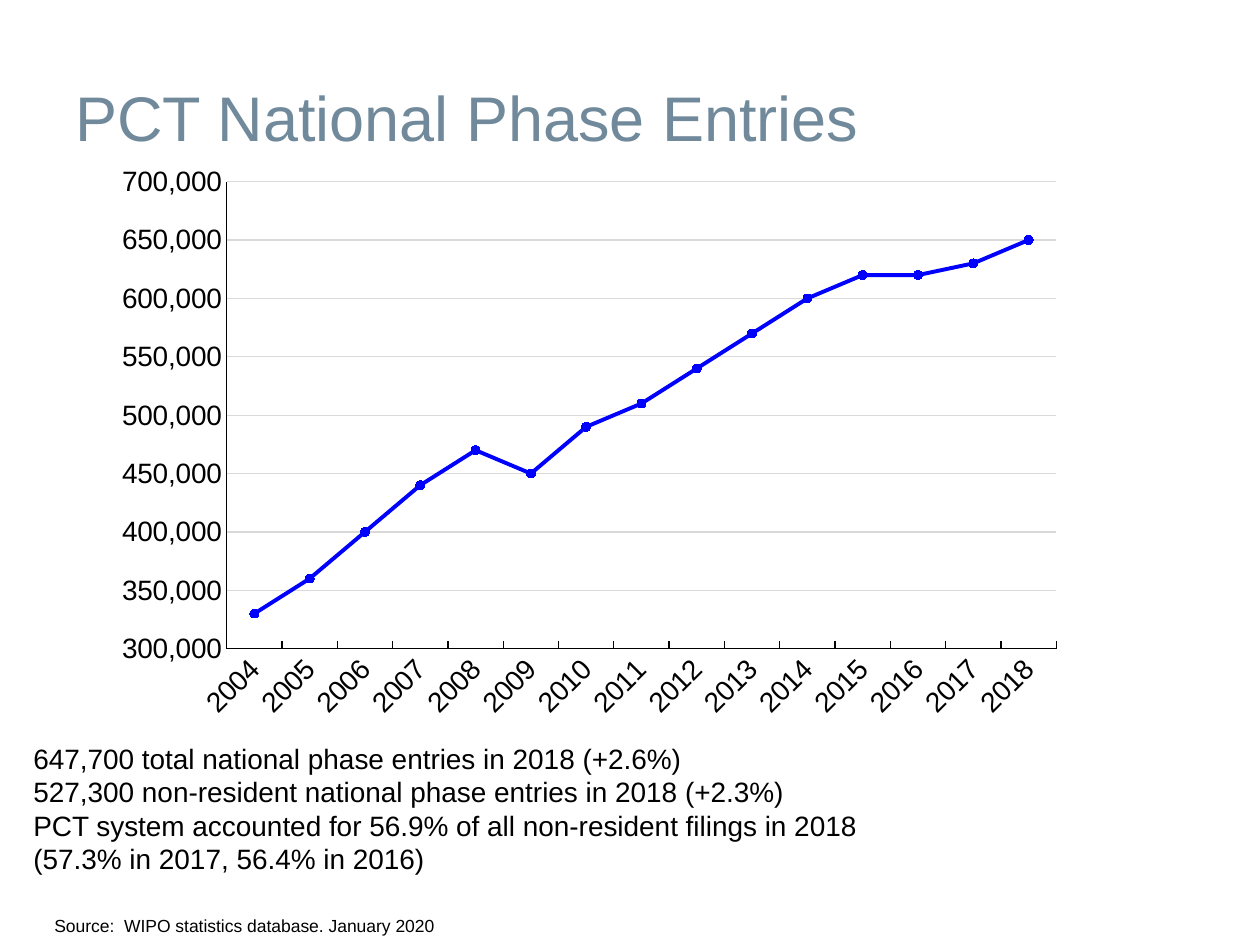
from dataclasses import dataclass

from lxml.etree import SubElement
from pptx import Presentation
from pptx.chart.data import CategoryChartData
from pptx.dml.color import RGBColor
from pptx.enum.chart import XL_CHART_TYPE, XL_MARKER_STYLE, XL_TICK_MARK
from pptx.enum.text import MSO_ANCHOR, MSO_AUTO_SIZE
from pptx.oxml.ns import qn
from pptx.util import Pt

PX = 914400 / 126


@dataclass(frozen=True)
class Theme:
    face: str = "Arial"
    head: str = "70899B"
    ink: str = "000000"
    line: str = "0000FF"
    grid: str = "D9D9D9"
    big: int = 36
    body: int = 16
    small: int = 10


THEME = Theme()
YEARS = range(2004, 2019)
COUNTS = [330, 360, 400, 440, 470, 450, 490, 510, 540, 570, 600, 620, 620,
          630, 650]  # thousands
NOTES = (
    "647,700 total national phase entries in 2018 (+2.6%)",
    "527,300 non-resident national phase entries in 2018 (+2.3%)",
    "PCT system accounted for 56.9% of all non-resident filings in 2018",
    "(57.3% in 2017, 56.4% in 2016)",
)


def emu(*nums):
    return [round(n * PX) for n in nums]


def style(font, size, color=THEME.ink):
    font.name = THEME.face
    font.size = Pt(size)
    font.color.rgb = RGBColor.from_string(color)


def stroke(line, color, width):
    line.color.rgb = RGBColor.from_string(color)
    line.width = Pt(width)


def add_text(slide, box, text, size=THEME.body, color=THEME.ink,
             anchor=MSO_ANCHOR.TOP, wrap=True, grow=True):
    frame = slide.shapes.add_textbox(*emu(*box)).text_frame
    frame.word_wrap = wrap
    frame.vertical_anchor = anchor
    frame.auto_size = (MSO_AUTO_SIZE.SHAPE_TO_FIT_TEXT if grow
                       else MSO_AUTO_SIZE.NONE)
    para = frame.paragraphs[0]
    para.text = text
    for run in para.runs:
        style(run.font, size, color)
    # Line breaks take the size of their text
    for gap in para._p.findall(qn("a:br")):
        SubElement(gap, qn("a:rPr"), sz=str(size * 100))


def set_plot(chart, **place):
    """Fix the inner plot area as fractions of the chart."""
    area = chart._chartSpace.chart.plotArea
    for old in area.findall(qn("c:layout")):
        area.remove(old)
    frame = SubElement(area, qn("c:layout"))
    area.insert(0, frame)
    hand = SubElement(frame, qn("c:manualLayout"))
    parts = dict(layoutTarget="inner", xMode="edge", yMode="edge", **place)
    for name, val in parts.items():
        SubElement(hand, qn(f"c:{name}"), val=str(val))


def add_graph(slide, box):
    data = CategoryChartData(number_format="#,##0")
    data.categories = [str(year) for year in YEARS]
    data.add_series("Series 1", [count * 1000 for count in COUNTS])
    chart = slide.shapes.add_chart(
        XL_CHART_TYPE.LINE_MARKERS, *emu(*box), data).chart
    chart.has_legend = False
    chart.has_title = False
    style(chart.font, THEME.small)
    set_plot(chart, x=0.15, y=0.034, w=0.815, h=0.767)

    # Axes
    years, scale = chart.category_axis, chart.value_axis
    for axis, tick in ((years, XL_TICK_MARK.INSIDE),
                       (scale, XL_TICK_MARK.NONE)):
        axis.major_tick_mark = tick
        axis.minor_tick_mark = XL_TICK_MARK.NONE
        style(axis.tick_labels.font, THEME.body)
        stroke(axis.format.line, THEME.ink, 0.75)
    years.has_major_gridlines = False
    turn = years._element.find(qn("c:txPr")).find(qn("a:bodyPr"))
    turn.set("rot", str(-45 * 60000))
    turn.set("vert", "horz")
    scale.minimum_scale = 300000
    scale.maximum_scale = 700000
    scale.major_unit = 50000
    scale.tick_labels.number_format = "#,##0"
    scale.tick_labels.number_format_is_linked = False
    scale.has_major_gridlines = True
    stroke(scale.major_gridlines.format.line, THEME.grid, 0.75)

    # Series
    plot = chart.plots[0]
    plot.vary_by_categories = False
    trend = plot.series[0]
    trend.smooth = False
    stroke(trend.format.line, THEME.line, 2.25)
    mark = trend.marker
    mark.style = XL_MARKER_STYLE.CIRCLE
    mark.size = 5
    mark.format.fill.solid()
    mark.format.fill.fore_color.rgb = RGBColor.from_string(THEME.line)
    stroke(mark.format.line, THEME.line, 0.75)


def add_foot(slide, box):
    """Key figures, with the source line below them."""
    left, top, width, height = box
    add_text(slide, box, "\v".join(NOTES), wrap=False)
    add_text(slide, (left + 21, top + height + 25, 630, 34),
             "Source:  WIPO statistics database. January 2020",
             size=THEME.small)


def main():
    deck = Presentation()
    deck.slide_width, deck.slide_height = emu(1260, 945)
    slide = deck.slides.add_slide(deck.slide_layouts[6])
    add_text(slide, (63, 37, 1134, 158), "PCT National Phase Entries",
             size=THEME.big, color=THEME.head, anchor=MSO_ANCHOR.MIDDLE,
             grow=False)
    add_graph(slide, (74, 161, 1018, 609))
    add_foot(slide, (21, 735, 859, 149))
    deck.save("out.pptx")


if __name__ == "__main__":
    main()
